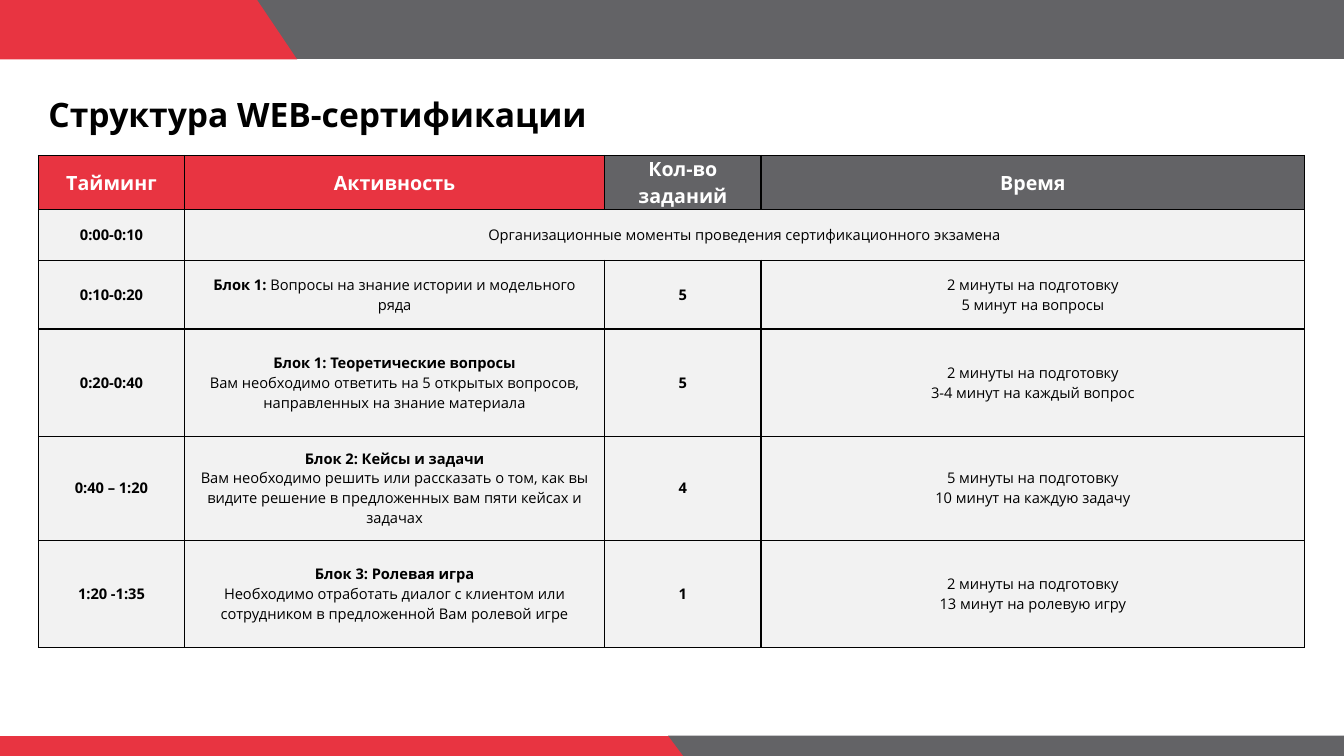
from copy import deepcopy
from dataclasses import dataclass

from pptx import Presentation
from pptx import util as u
from pptx.dml.color import RGBColor
from pptx.enum import shapes, text
from pptx.oxml import parse_xml
from pptx.oxml.ns import nsdecls

RED = RGBColor(0xE8, 0x34, 0x41)
GREY = RGBColor(0x63, 0x63, 0x66)
PALE = RGBColor(0xF2, 0xF2, 0xF2)
BLACK = RGBColor(0, 0, 0)
WHITE = RGBColor(0xFF, 0xFF, 0xFF)
FONT = "Open Sans"
WIDE, HIGH = 33.87, 19.05
TOP, FOOT = 1.5, 18.54


@dataclass
class Band:
    fill: RGBColor
    points: list[tuple[float, float]]


@dataclass
class Row:
    high: float
    cells: list[str]


BANDS = [
    Band(GREY, [(0, 0), (WIDE, 0), (WIDE, TOP), (0, TOP)]),
    Band(RED, [(0, 0), (6.48, 0), (7.49, TOP), (0, TOP)]),
    Band(RED, [(0, FOOT), (WIDE, FOOT), (WIDE, HIGH), (0, HIGH)]),
    Band(GREY, [(16.84, FOOT), (WIDE, FOOT), (WIDE, HIGH), (17.22, HIGH)]),
]

COLS = [3.68, 10.59, 3.94, 13.7]
HEADS = [RED, RED, GREY, GREY]

# *bold*, | line break, newline for a new paragraph
ROWS = [
    Row(1.36, ["*Тайминг*", "*Активность*", "*Кол-во|заданий*", "*Время*"]),
    Row(1.28, ["*0:00-0:10*",
               "Организационные моменты проведения сертификационного экзамена"]),
    Row(1.73, ["*0:10-0:20*",
               "*Блок 1: *Вопросы на знание истории и модельного ряда",
               "*5*",
               "2 минуты на подготовку\n5 минут на вопросы"]),
    Row(2.7, ["*0:20-0:40*",
              "*Блок 1: Теоретические вопросы*\nВам необходимо ответить на 5 "
              "открытых вопросов, направленных на знание материала",
              "*5*",
              "2 минуты на подготовку\n3-4 минут на каждый вопрос"]),
    Row(2.62, ["*0:40 – 1:20*",
               "*Блок 2: Кейсы и задачи*\nВам необходимо решить или рассказать "
               "о том, как вы видите решение в предложенных вам пяти кейсах и задачах",
               "*4*",
               "5 минуты на подготовку\n10 минут на каждую задачу"]),
    Row(2.7, ["*1:20 -1:35*",
              "*Блок 3: Ролевая игра*\nНеобходимо отработать диалог с клиентом "
              "или сотрудником в предложенной Вам ролевой игре",
              "*1*",
              "2 минуты на подготовку\n13 минут на ролевую игру"]),
]


def put(frame, words: str, *, size: float, color: RGBColor = BLACK,
        align=text.PP_ALIGN.CENTER) -> None:
    """Fill a text frame from marked-up words."""
    for i, line in enumerate(words.split("\n")):
        para = frame.add_paragraph() if i else frame.paragraphs[0]
        para.alignment = align
        for j, part in enumerate(line.split("*")):
            if not part:
                continue
            for k, piece in enumerate(part.split("|")):
                if k:
                    para.add_line_break()
                    para._p[-1].append(deepcopy(run._r.rPr))
                run = para.add_run()
                run.text = piece
                run.font.name = FONT
                run.font.size = u.Pt(size)
                run.font.bold = j % 2 == 1
                run.font.color.rgb = color


def draw(slide, band: Band) -> None:
    first, *rest = [(u.Cm(x), u.Cm(y)) for x, y in band.points]
    path = slide.shapes.build_freeform(*first)
    path.add_line_segments(rest)
    shape = path.convert_to_shape()
    shape.shadow.inherit = False
    shape.fill.solid()
    shape.fill.fore_color.rgb = band.fill
    shape.line.fill.background()


def style(cell, fill: RGBColor, inset: float) -> None:
    """Set margins, borders and fill of a cell."""
    cell.vertical_anchor = text.MSO_ANCHOR.MIDDLE
    cell.margin_left = cell.margin_right = u.Cm(inset)
    cell.margin_top = cell.margin_bottom = u.Cm(inset)
    props = cell._tc.get_or_add_tcPr()
    for side in ("lnL", "lnR", "lnT", "lnB"):
        props.append(parse_xml(
            f'<a:{side} {nsdecls("a")} w="{u.Pt(1)}"><a:solidFill>'
            f'<a:srgbClr val="{BLACK}"/></a:solidFill></a:{side}>'))
    cell.fill.solid()
    cell.fill.fore_color.rgb = fill


def add_grid(slide) -> None:
    grid = slide.shapes.add_table(
        len(ROWS), len(COLS), u.Cm(0.97), u.Cm(3.92),
        u.Cm(sum(COLS)), u.Cm(sum(row.high for row in ROWS))).table
    for col, wide in zip(grid.columns, COLS):
        col.width = u.Cm(wide)
    for r, row in enumerate(ROWS):
        grid.rows[r].height = u.Cm(row.high)
        for c, head in enumerate(HEADS):
            style(grid.cell(r, c), PALE if r else head, 0.3 if r else 0)
        for c, words in enumerate(row.cells):
            put(grid.cell(r, c).text_frame, words, size=10.5 if r else 14,
                color=BLACK if r else WHITE)
    grid.cell(1, 1).merge(grid.cell(1, 3))


def main() -> None:
    deck = Presentation()
    deck.slide_width, deck.slide_height = u.Cm(WIDE), u.Cm(HIGH)
    slide = deck.slides.add_slide(deck.slide_layouts[6])
    for band in BANDS:
        draw(slide, band)
    title = slide.shapes.add_textbox(u.Cm(0.97), u.Cm(2.25), u.Cm(30), u.Cm(1.6))
    title.text_frame.word_wrap = True
    put(title.text_frame, "*Структура WEB-сертификации*", size=24,
        align=text.PP_ALIGN.LEFT)
    add_grid(slide)
    deck.save("out.pptx")


if __name__ == "__main__":
    main()
